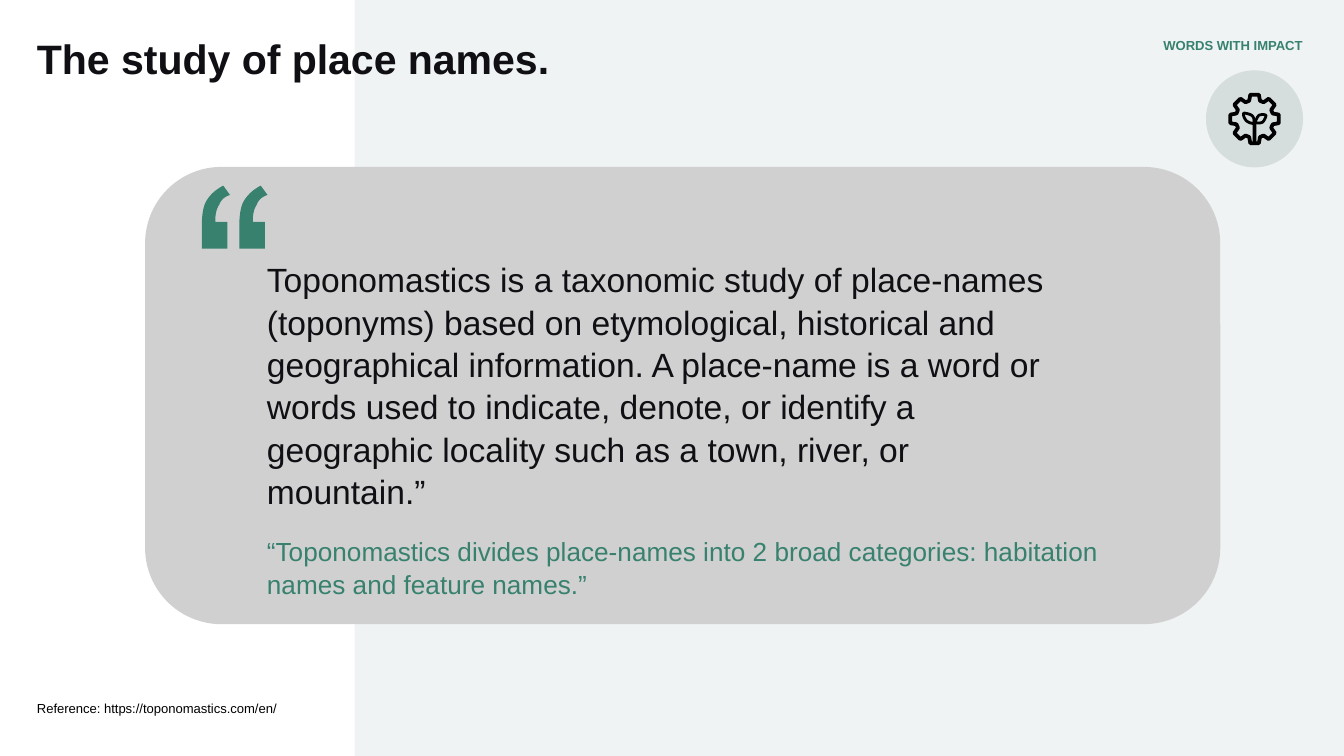
from math import cos, pi, sin

from lxml.etree import SubElement
from pptx import Presentation
from pptx.dml.color import RGBColor
from pptx.enum.shapes import MSO_SHAPE
from pptx.enum.text import MSO_ANCHOR, MSO_AUTO_SIZE, PP_ALIGN
from pptx.oxml.ns import qn
from pptx.util import Pt

INK, GREEN, BLACK = "0F0F14", "37816E", "000000"

# Outlines: a pair is a corner, six numbers are a Bezier curve
QUOTE = [(11.5, 0), (15.1, 5), (12.2, 5.8, 10.1, 7.9, 9.4, 10.1),
         (7.9, 12.2, 7.2, 15.1, 7.2, 19.4), (13.7, 19.4), (13.7, 33.8),
         (0, 33.8), (0, 22.3), (0, 15.8, 0.7, 11.5, 2.2, 8.6),
         (4.3, 5, 7.2, 2.2, 11.5, 0)]
LEAVES = [
    [(-0.4, 2.5), (0, 2.5, 0, -0.7, -1.4, -1.8),
     (-3.2, -2.9, -4.7, -2.9, -5.4, -3.1), (-6.5, -3.2, -5.8, -0.4, -4.3, 1.1),
     (-2.5, 2.5, -0.4, 2.5, -0.4, 2.5)],
    [(0.4, 1.8), (0.4, 2.2, 2.9, 2.5, 4.3, 1.8),
     (5.4, 0.7, 6.1, -1.1, 6.1, -1.7), (6.1, -2.5, 3.2, -2.5, 2.2, -1.8),
     (1.1, -0.4, 0.4, 1.4, 0.4, 1.8)],
]


def color(code):
    return RGBColor.from_string(code)


def curve(parts, steps=10):
    """Turn corners and curves into a list of points."""
    dots = []
    for part in parts:
        if len(part) == 2:
            dots.append(part)
            continue
        a, b, c, d = dots[-1], part[:2], part[2:4], part[4:]
        for i in range(1, steps + 1):
            t = i / steps
            u = 1 - t
            dots.append(tuple(
                u**3 * a[k] + 3 * u * u * t * b[k] + 3 * u * t * t * c[k] + t**3 * d[k]
                for k in (0, 1)))
    return dots


def gear(teeth=8):
    """Corners of a gear around the origin."""
    dots = []
    for i in range(teeth):
        turn = 2 * pi * i / teeth
        for x, y in ((-2.9, -9.7), (-2.3, -13), (2.3, -13), (2.9, -9.7)):
            dots.append((x * cos(turn) - y * sin(turn), x * sin(turn) + y * cos(turn)))
    return dots


class Deck:
    font = "Arial"

    def __init__(self, wide, high):
        self.show = Presentation()
        self.show.slide_width, self.show.slide_height = Pt(wide), Pt(high)
        self.slide = self.show.slides.add_slide(self.show.slide_layouts[5])

    def paint(self, shape, fill=None, line=None, width=1):
        shape.shadow.inherit = False
        if fill:
            shape.fill.solid()
            shape.fill.fore_color.rgb = color(fill)
        else:
            shape.fill.background()
        if line:
            shape.line.color.rgb = color(line)
            shape.line.width = Pt(width)
            # Round joins
            SubElement(shape.element.spPr.find(qn("a:ln")), qn("a:round"))
        else:
            shape.line.fill.background()

    def shape(self, kind, box, fill, bend=None):
        item = self.slide.shapes.add_shape(kind, *map(Pt, box))
        if bend is not None:
            item.adjustments[0] = bend
        self.paint(item, fill)

    def outline(self, dots, left, top, **look):
        dots = [(Pt(left + x), Pt(top + y)) for x, y in dots]
        pen = self.slide.shapes.build_freeform(*dots[0], scale=1)
        pen.add_line_segments(dots[1:], close=True)
        self.paint(pen.convert_to_shape(), **look)

    def style(self, item, words, inset, anchor, font, para):
        frame = item.text_frame
        frame.text = words
        sides = ("margin_left", "margin_top", "margin_right", "margin_bottom")
        looks = dict(zip(sides, map(Pt, inset)), word_wrap=True,
                     auto_size=MSO_AUTO_SIZE.NONE, vertical_anchor=anchor)
        first = frame.paragraphs[0]
        size, code, bold = font
        type_set = {"name": self.font, "size": Pt(size), "bold": bold}
        first.font.color.rgb = color(code)
        for thing, values in ((frame, looks), (first, para), (first.font, type_set)):
            for key, value in values.items():
                setattr(thing, key, value)

    def text(self, words, box, font, inset=(0, 0, 0, 0), anchor=MSO_ANCHOR.TOP, **para):
        item = self.slide.shapes.add_textbox(*map(Pt, box))
        self.style(item, words, inset, anchor, font, para)

    def title(self, words, box, font, inset, **para):
        item = self.slide.shapes.title
        for key, value in zip(("left", "top", "width", "height"), box):
            setattr(item, key, Pt(value))
        self.style(item, words, inset, MSO_ANCHOR.TOP, font, para)
        # Bring the title in front of the panels
        item.element.getparent().append(item.element)


def main():
    deck = Deck(720, 405)

    # Panels
    deck.shape(MSO_SHAPE.RECTANGLE, (190, 0, 530, 405), "F0F3F3")
    deck.shape(MSO_SHAPE.ROUNDED_RECTANGLE, (77.75, 89.4, 576, 245), "D0D0D0", 0.167)

    # Quote mark
    for left in (108.1, 128.2):
        deck.outline(curve(QUOTE), left, 99.5, fill=GREEN)

    # Quoted text
    middle = dict(anchor=MSO_ANCHOR.MIDDLE, space_after=Pt(12), line_spacing=1.05)
    deck.text("Toponomastics is a taxonomic study of place-names (toponyms) based on "
              "etymological, historical and geographical information. A place-name is "
              "a word or words used to indicate, denote, or identify a geographic "
              "locality such as a town, river, or mountain.”",
              (143, 140.4, 425.5, 131), (18, INK, False), **middle)
    deck.text("“Toponomastics divides place-names into 2 broad categories: "
              "habitation names and feature names.”",
              (143, 286.6, 445.7, 33.8), (14, GREEN, False), **middle)

    # Title, tag and reference
    deck.title("The study of place names.", (19.8, 20.9, 290, 51), (22, INK, True),
               (0, 0, 7.2, 7.2), alignment=PP_ALIGN.LEFT, line_spacing=0.9)
    deck.text("WORDS WITH IMPACT", (476.6, 20.9, 221.2, 26), (7, GREEN, True),
              (0, 0, 0, 7.2), alignment=PP_ALIGN.RIGHT, line_spacing=0.9)
    deck.text("Reference: https://toponomastics.com/en/", (19.8, 352.8, 604.8, 31),
              (7, BLACK, False), (0, 0, 7.2, 0), MSO_ANCHOR.BOTTOM)

    # Badge with a sprout in a gear
    x, y = 672.1, 63.7
    deck.shape(MSO_SHAPE.OVAL, (x - 26, y - 26, 52, 52), "D5DDDD")
    deck.outline(gear(), x, y, line=BLACK, width=2)
    deck.shape(MSO_SHAPE.ROUNDED_RECTANGLE, (x - 1, y + 0.4, 2, 13), BLACK, 0.3)
    for leaf in LEAVES:
        deck.outline(curve(leaf), x, y, line=BLACK, width=1.5)

    deck.show.save("out.pptx")


if __name__ == "__main__":
    main()
